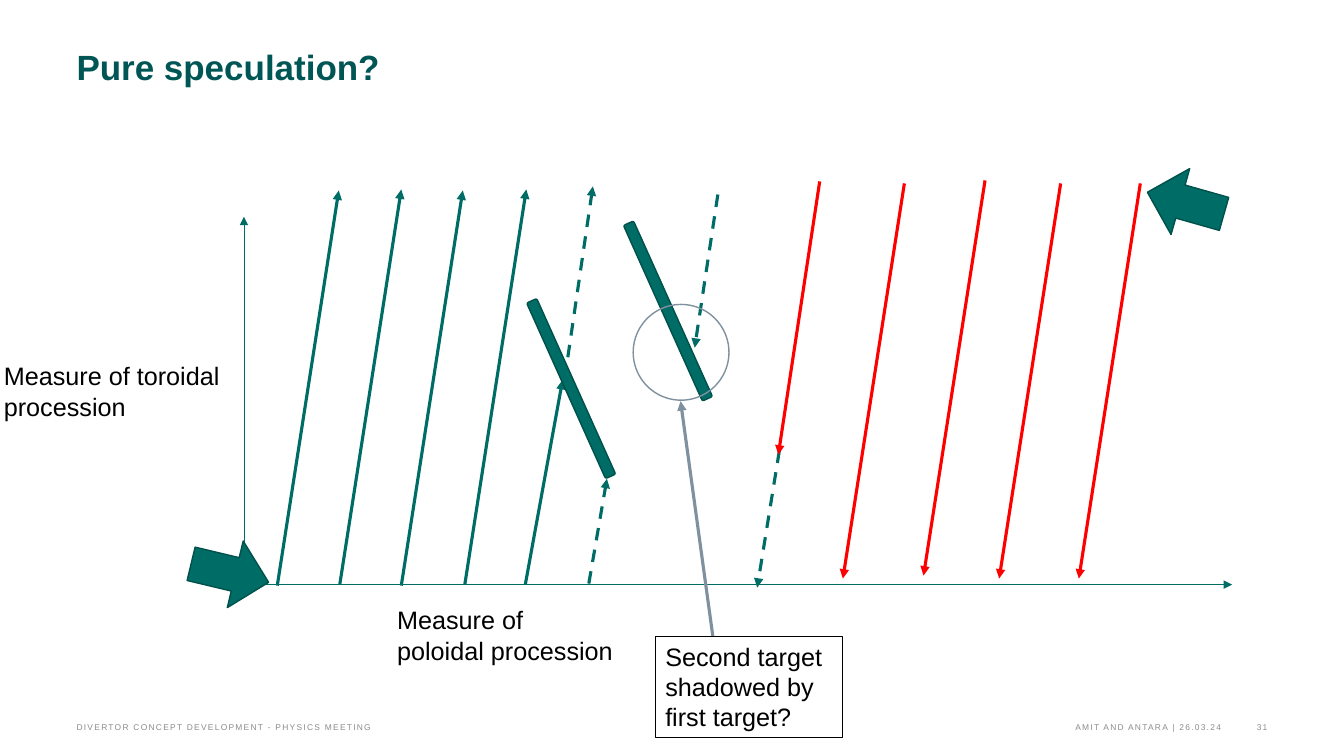
from dataclasses import dataclass

from lxml import etree
from pptx import Presentation
from pptx import util as u
from pptx.dml.color import RGBColor
from pptx.enum import dml, shapes, text
from pptx.oxml.ns import qn


@dataclass(frozen=True)
class Theme:
    font: str = "Arial"
    title: str = "005555"
    green: str = "006C66"
    green_edge: str = "00504B"
    red: str = "FF0000"
    grey: str = "7F919E"
    black: str = "000000"
    footer: str = "8C8C8C"
    title_size: float = 25
    label_size: float = 18
    footer_size: float = 6
    thin: float = 0.5
    edge: float = 1
    thick: float = 2.25


@dataclass(frozen=True)
class Box:
    left: float
    top: float
    width: float
    height: float

    def inches(self):
        return [u.Inches(v) for v in (self.left, self.top, self.width, self.height)]

    def point(self, x, y):
        """Slide position of a point x right of and y above the lower left corner."""
        return self.left + x, self.top + self.height - y

    def inner(self, x, y, width, height):
        """Box whose top left corner lies x right of and y above the lower left corner."""
        return Box(*self.point(x, y), width, height)


THEME = Theme()


def rgb(colour):
    return RGBColor.from_string(colour)


def write(shape, words, size, colour, bold=False, align=text.PP_ALIGN.LEFT):
    frame = shape.text_frame
    frame.text = words
    frame.word_wrap = True
    frame.vertical_anchor = text.MSO_ANCHOR.TOP
    para = frame.paragraphs[0]
    para.alignment = align
    span = para.runs[0]
    span.font.name = THEME.font
    span.font.size = u.Pt(size)
    span.font.bold = bold
    span.font.color.rgb = rgb(colour)
    return frame


def add_text(page, box, words, size, colour, **style):
    return write(page.shapes.add_textbox(*box.inches()), words, size, colour, **style)


def clear_margins(frame):
    frame.margin_left = frame.margin_right = frame.margin_top = frame.margin_bottom = 0


def add_shape(page, kind, box, fill, line, width, rotation=0):
    shape = page.shapes.add_shape(kind, *box.inches())
    shape.shadow.inherit = False
    if fill:
        shape.fill.solid()
        shape.fill.fore_color.rgb = rgb(fill)
    else:
        shape.fill.background()
    shape.line.color.rgb = rgb(line)
    shape.line.width = u.Pt(width)
    shape.rotation = rotation
    return shape


def add_arrow(page, start, end, colour, width, dashed=False):
    ends = [u.Inches(v) for v in (*start, *end)]
    arrow = page.shapes.add_connector(shapes.MSO_CONNECTOR.STRAIGHT, *ends)
    arrow.line.color.rgb = rgb(colour)
    arrow.line.width = u.Pt(width)
    if dashed:
        arrow.line.dash_style = dml.MSO_LINE.DASH
    properties = arrow._element.spPr
    etree.SubElement(properties.find(qn("a:ln")), qn("a:tailEnd"), type="triangle")
    etree.SubElement(properties, qn("a:effectLst"))


def add_title(page, box):
    frame = add_text(page, box, "Pure speculation?", THEME.title_size, THEME.title, bold=True)
    clear_margins(frame)
    frame.paragraphs[0].line_spacing = u.Pt(28)


def add_axes(page, box):
    for end in ((0, 3.65), (box.width, 0)):
        add_arrow(page, box.point(0, 0), box.point(*end), THEME.green, THEME.thin)
    for left, top, words in (
        (-2.48, 2.27, "Measure of toroidal procession"),
        (1.42, -0.15, "Measure of poloidal procession"),
    ):
        add_text(page, box.inner(left, top, 2.34, 0.71), words, THEME.label_size, THEME.black)


def add_field_lines(page, box):
    """Full lines share one slope; the others stop at or start from a target."""
    run, rise = 0.61, 3.92
    for x, y in ((0.33, -0.01), (0.95, 0), (1.56, -0.01), (2.19, 0)):
        add_arrow(page, box.point(x, y), box.point(x + run, y + rise), THEME.green, THEME.thick)
    for x, y in ((8.89, 3.98), (8.1, 3.98), (7.35, 4.01), (6.55, 3.98)):
        add_arrow(page, box.point(x, y), box.point(x - run, y - rise), THEME.red, THEME.thick)
    for start, end, colour, dashed in (
        ((2.79, 0), (3.16, 2.03), THEME.green, False),
        ((3.42, 0.01), (3.6, 1.05), THEME.green, True),
        ((3.18, 2.04), (3.46, 3.95), THEME.green, True),
        ((5.31, 1.33), (5.09, -0.03), THEME.green, True),
        ((5.71, 4), (5.3, 1.29), THEME.red, False),
    ):
        add_arrow(page, box.point(*start), box.point(*end), colour, THEME.thick, dashed)


def add_targets(page, box):
    for left, top in ((3.19, 2.9), (4.15, 3.67)):
        add_shape(page, shapes.MSO_SHAPE.ROUNDED_RECTANGLE, box.inner(left, top, 0.11, 1.91),
                  THEME.green, THEME.green_edge, THEME.edge, 335.8)
    add_arrow(page, box.point(4.7, 3.87), box.point(4.47, 2.35), THEME.green, THEME.thick, True)


def add_inflows(page, box):
    for left, top, rotation in ((-0.48, 0.51, 283.4), (9, 4.18, 105.8)):
        add_shape(page, shapes.MSO_SHAPE.DOWN_ARROW, box.inner(left, top, 0.68, 0.79),
                  THEME.green, THEME.green_edge, THEME.edge, rotation)


def add_callout(page, box):
    add_shape(page, shapes.MSO_SHAPE.OVAL, box.inner(3.86, 2.78, 0.95, 0.95),
              None, THEME.grey, THEME.edge)
    add_arrow(page, box.point(4.65, -0.51), box.point(4.33, 1.82), THEME.grey, THEME.thick)
    note = add_shape(page, shapes.MSO_SHAPE.RECTANGLE, box.inner(4.08, -0.51, 1.86, 1.01),
                     None, THEME.black, THEME.thin)
    write(note, "Second target shadowed by first target?", THEME.label_size, THEME.black)


def add_diagram(page, box):
    for add_layer in (add_axes, add_field_lines, add_targets, add_inflows, add_callout):
        add_layer(page, box)


def add_footer(page, box):
    for left, width, words, align in (
        (0, 6.66, "DIVERTOR CONCEPT DEVELOPMENT - PHYSICS MEETING", text.PP_ALIGN.LEFT),
        (7.35, 4, "AMIT AND ANTARA | 26.03.24", text.PP_ALIGN.RIGHT),
        (11.45, 0.36, "31", text.PP_ALIGN.RIGHT),
    ):
        frame = add_text(page, box.inner(left, box.height, width, box.height), words,
                         THEME.footer_size, THEME.footer, align=align)
        clear_margins(frame)
        frame.vertical_anchor = text.MSO_ANCHOR.BOTTOM
        frame.paragraphs[0].runs[0].font._element.set("spc", "90")


def main():
    deck = Presentation()
    deck.slide_width, deck.slide_height = u.Inches(13.33), u.Inches(7.5)
    page = deck.slides.add_slide(deck.slide_layouts[6])
    add_title(page, Box(0.76, 0.48, 10.47, 0.86))
    add_diagram(page, Box(2.42, 1.8, 9.8, 4))
    add_footer(page, Box(0.76, 7.1, 11.81, 0.16))
    deck.save("out.pptx")


if __name__ == "__main__":
    main()
